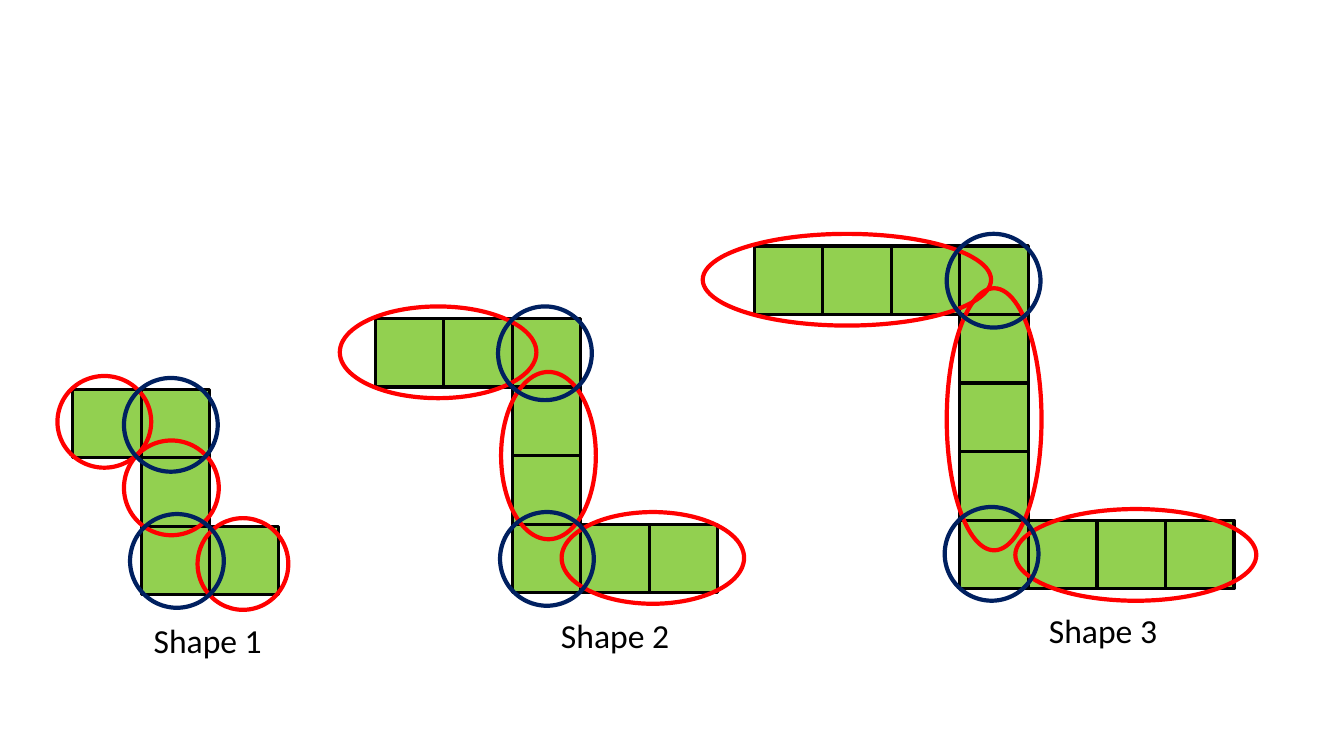
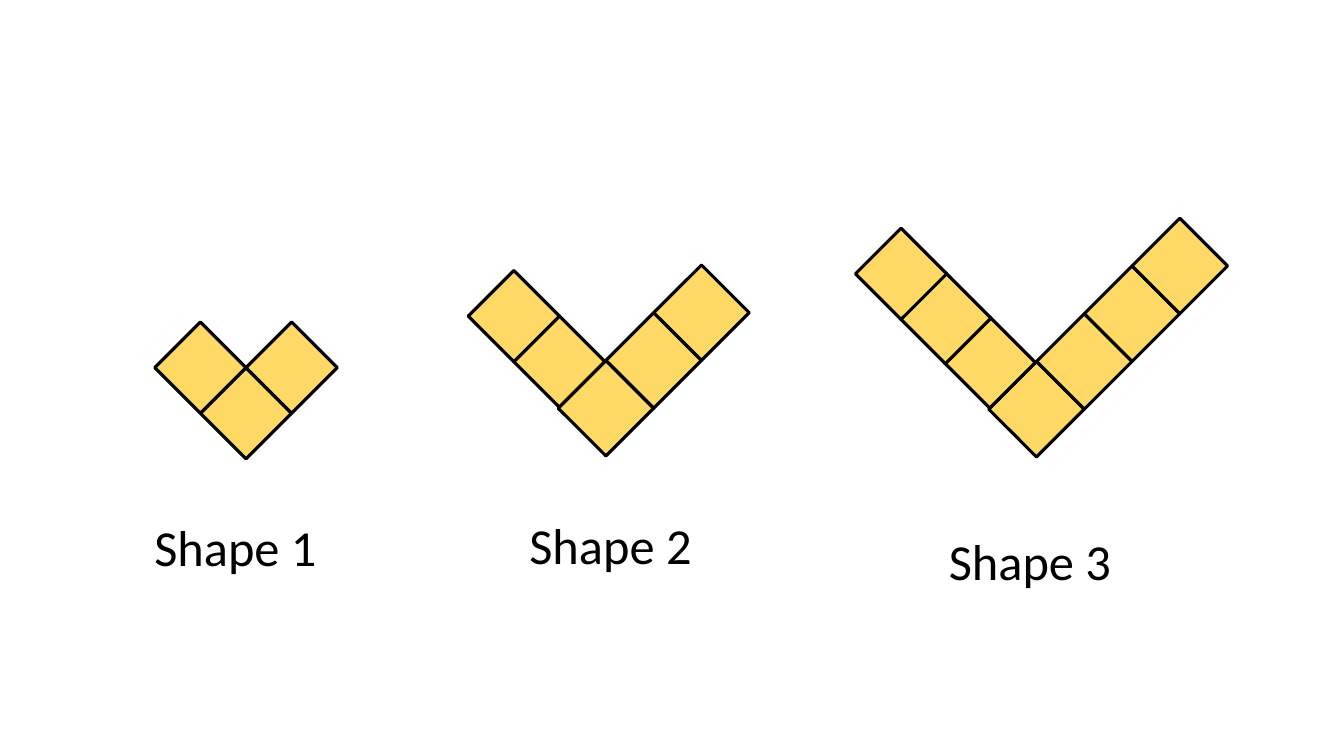
from dataclasses import dataclass
from math import sqrt

from pptx import Presentation
from pptx.dml.color import RGBColor
from pptx.enum.shapes import MSO_SHAPE
from pptx.enum.text import MSO_AUTO_SIZE, PP_ALIGN
from pptx.shapes.autoshape import Shape
from pptx.shapes.group import GroupShape
from pptx.slide import Slide
from pptx.util import Inches, Pt

BLACK = RGBColor(0x00, 0x00, 0x00)
GREEN = RGBColor(0x92, 0xD0, 0x50)
YELLOW = RGBColor(0xFF, 0xD9, 0x66)
RED = RGBColor(0xFF, 0x00, 0x00)
NAVY = RGBColor(0x00, 0x20, 0x60)
FONT = "Calibri"
TILE = 0.68
LEFT_TILE = 0.64
CORNER_RING = 0.93


@dataclass(frozen=True)
class Box:
    left: float
    top: float
    width: float
    height: float


@dataclass(frozen=True)
class Zigzag:
    arm: int
    left: float
    top: float
    label: Box
    arm_rings: tuple[Box, ...]
    corner_rings: tuple[tuple[float, float], ...]


@dataclass(frozen=True)
class Chevron:
    arm: int
    center_x: float
    center_y: float
    tile: float
    left_step: float
    label: Box


ZIGZAGS = (
    Zigzag(1, 1.4, 3.86, Box(0.8, 6.1, 2.52, 0.5),
           (Box(0.57, 3.73, 0.93, 0.91), Box(1.96, 5.14, 0.9, 0.91),
            Box(1.23, 4.37, 0.94, 0.94)),
           ((1.23, 3.75), (1.29, 5.1))),
    Zigzag(2, 5.08, 3.16, Box(4.84, 6.05, 2.52, 0.5),
           (Box(3.37, 3.04, 1.95, 0.91), Box(5.57, 5.08, 1.81, 0.91),
            Box(4.97, 3.69, 0.94, 1.66)),
           ((4.94, 3.04), (4.96, 5.08))),
    Zigzag(3, 9.52, 2.44, Box(9.92, 6, 2.04, 0.5),
           (Box(6.97, 2.32, 2.86, 0.91), Box(10.07, 5.05, 2.39, 0.91),
            Box(9.39, 2.86, 0.94, 2.6)),
           ((9.39, 2.32), (9.37, 5.03))),
)

CHEVRONS = (
    Chevron(1, 2.44, 4.1, 0.64, 0.45, Box(1.32, 5.07, 2.03, 0.71)),
    Chevron(2, 6.01, 4.05, 0.67, 0.45, Box(5.04, 5.05, 2.03, 0.71)),
    Chevron(3, 10.28, 4.06, 0.67, 0.44, Box(9.2, 5.21, 2.03, 0.71)),
)


def add_outlined(parent: Slide | GroupShape, kind: MSO_SHAPE, box: Box,
                 color: RGBColor, weight: float) -> Shape:
    shapes = parent.shapes
    shape = shapes.add_shape(kind, Inches(box.left), Inches(box.top),
                             Inches(box.width), Inches(box.height))
    shape.shadow.inherit = False
    shape.fill.background()
    shape.line.color.rgb = color
    shape.line.width = Pt(weight)
    return shape


def add_tile(group: GroupShape, center_x: float, center_y: float, size: float,
             color: RGBColor, rotation: float = 0) -> None:
    box = Box(center_x - size / 2, center_y - size / 2, size, size)
    shape = add_outlined(group, MSO_SHAPE.RECTANGLE, box, BLACK, 2.25)
    shape.fill.solid()
    shape.fill.fore_color.rgb = color
    shape.rotation = rotation


def add_ring(slide: Slide, box: Box, color: RGBColor) -> None:
    add_outlined(slide, MSO_SHAPE.OVAL, box, color, 3)


def add_label(slide: Slide, number: int, box: Box, size: float) -> None:
    shape = slide.shapes.add_textbox(Inches(box.left), Inches(box.top),
                                     Inches(box.width), Inches(box.height))
    frame = shape.text_frame
    frame.word_wrap = True
    frame.auto_size = MSO_AUTO_SIZE.SHAPE_TO_FIT_TEXT
    paragraph = frame.paragraphs[0]
    paragraph.alignment = PP_ALIGN.CENTER
    run = paragraph.add_run()
    run.text = f"Shape {number}"
    run.font.name = FONT
    run.font.size = Pt(size)
    run.font.color.rgb = BLACK


def add_zigzag(slide: Slide, zigzag: Zigzag) -> None:
    arm = zigzag.arm
    cells = [(column, 0) for column in range(-arm, 1)]
    cells += [(0, row) for row in range(1, arm + 1)]
    cells += [(column, arm + 1) for column in range(arm + 1)]
    group = slide.shapes.add_group_shape()
    for column, row in cells:
        add_tile(group, zigzag.left + (column + 0.5) * TILE,
                 zigzag.top + (row + 0.5) * TILE, TILE, GREEN)
    add_label(slide, arm, zigzag.label, 24)


def add_chevron(slide: Slide, chevron: Chevron) -> None:
    x, y, tile = chevron.center_x, chevron.center_y, chevron.tile
    group = slide.shapes.add_group_shape()
    for index in range(chevron.arm + 1):
        offset = index * tile / sqrt(2)
        add_tile(group, x + offset, y - offset, tile, YELLOW, 45)
    first_offset = (tile + LEFT_TILE) / 2 / sqrt(2)
    for index in range(chevron.arm):
        offset = first_offset + index * chevron.left_step
        add_tile(group, x - offset, y - offset, LEFT_TILE, YELLOW, 45)
    add_label(slide, chevron.arm, chevron.label, 36)


def build_zigzag_slide(slide: Slide) -> None:
    for zigzag in ZIGZAGS:
        add_zigzag(slide, zigzag)
    for zigzag in ZIGZAGS:
        for box in zigzag.arm_rings:
            add_ring(slide, box, RED)
    for zigzag in ZIGZAGS:
        for left, top in zigzag.corner_rings:
            add_ring(slide, Box(left, top, CORNER_RING, CORNER_RING), NAVY)


def build_chevron_slide(slide: Slide) -> None:
    for chevron in CHEVRONS:
        add_chevron(slide, chevron)


def main() -> None:
    presentation = Presentation()
    presentation.slide_width = Inches(13.33)
    presentation.slide_height = Inches(7.5)
    blank = presentation.slide_layouts[6]
    for build in (build_zigzag_slide, build_chevron_slide):
        build(presentation.slides.add_slide(blank))
    presentation.save("out.pptx")


if __name__ == "__main__":
    main()
